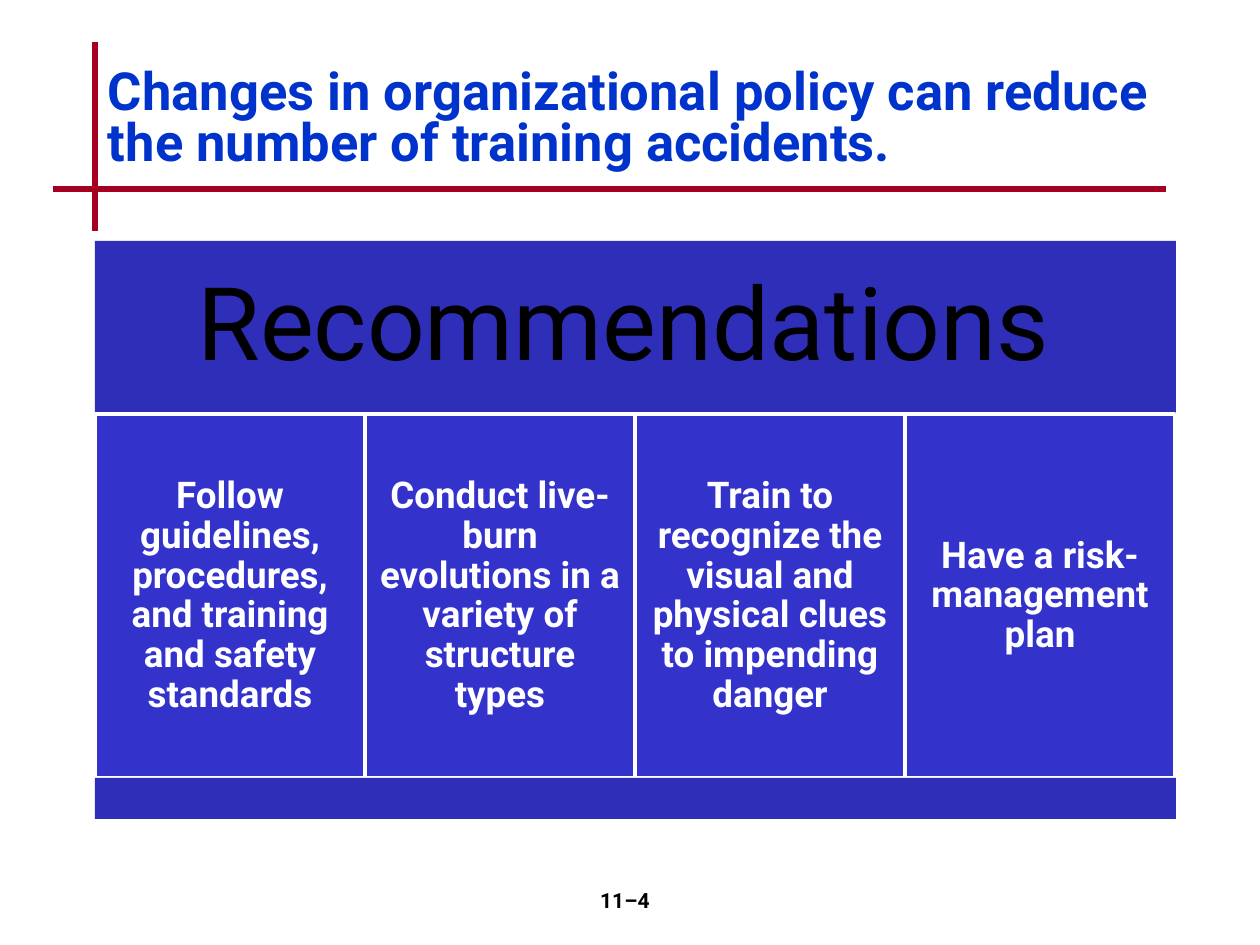
from lxml import etree
from pptx import Presentation
from pptx.dml.color import RGBColor
from pptx.enum.shapes import MSO_CONNECTOR as CONN, MSO_SHAPE as SHAPE
from pptx.enum.text import MSO_ANCHOR as ANCHOR, PP_ALIGN as ALIGN
from pptx.oxml.ns import qn
from pptx.util import Emu, Pt

PX = 914400 / 126
COLORS = {
    "rule": "A50021",
    "band": "2E2EB9",
    "card": "3333CC",
    "title": "0033CC",
    "white": "FFFFFF",
    "black": "000000",
}


def add_box(x, y, w, h, fill=None, line=None):
    s = slide.shapes.add_shape(SHAPE.RECTANGLE, *(Emu(round(v * PX)) for v in (x, y, w, h)))
    s.shadow.inherit = False
    s.fill.solid()
    s.fill.fore_color.rgb = RGBColor.from_string(COLORS[fill])
    if line:
        s.line.color.rgb = RGBColor.from_string(COLORS[line])
        s.line.width = Pt(2)
    else:
        s.line.fill.background()
    return s


def set_text(s, text, size, color, bold, align, spacing, anchor, inset_x, inset_y):
    tf = s.text_frame
    tf.text = text
    tf.word_wrap = True
    tf.vertical_anchor = anchor
    tf.margin_left = tf.margin_right = Emu(round(inset_x * PX))
    tf.margin_top = tf.margin_bottom = Emu(round(inset_y * PX))
    p = tf.paragraphs[0]
    p.alignment = align
    p.line_spacing = spacing
    font = p.runs[0].font
    font.name = "Roboto"
    font.size = Pt(size)
    font.bold = bold
    font.color.rgb = RGBColor.from_string(COLORS[color])


prs = Presentation()
prs.slide_width = Emu(round(1260 * PX))
prs.slide_height = Emu(round(945 * PX))
slide = prs.slides.add_slide(prs.slide_layouts[6])

for ends in [(95, 42, 95, 231), (53, 189, 1166, 189)]:
    c = slide.shapes.add_connector(CONN.STRAIGHT, *(Emu(round(v * PX)) for v in ends))
    c.line.color.rgb = RGBColor.from_string(COLORS["rule"])
    c.line.width = Pt(3)
    etree.SubElement(c._element.spPr, qn("a:effectLst"))

left, card_w = 95, 270
header = add_box(left, 241, 4 * card_w + 1, 173, "band")
set_text(header, "Recommendations", 58, "black", False, ALIGN.CENTER, 0.9, ANCHOR.MIDDLE, 30, 30)
header.text_frame.margin_right = Emu(round(54 * PX))

recommendations = [
    "Follow guidelines, procedures, and training and safety standards",
    "Conduct live-burn evolutions in a variety of structure types",
    "Train to recognize the visual and physical clues to impending danger",
    "Have a risk-management plan",
]
for i, text in enumerate(recommendations):
    card = add_box(left + i * card_w, 414, card_w, 364, "card", "white")
    set_text(card, text, 21, "white", True, ALIGN.CENTER, 0.9, ANCHOR.MIDDLE, 12, 12)

add_box(left, 778, 4 * card_w + 1, 41, "band")

title = slide.shapes.add_textbox(*(Emu(round(v * PX)) for v in (95, 42, 1071, 158)))
set_text(title, "Changes in organizational policy can reduce the number of training accidents.",
         30, "title", True, ALIGN.LEFT, 0.8, ANCHOR.MIDDLE, 13, 6)

number = slide.shapes.add_textbox(*(Emu(round(v * PX)) for v in (494, 882, 262, 63)))
set_text(number, "11–4", 12, "black", True, ALIGN.CENTER, 1.0, ANCHOR.TOP, 13, 6)

prs.save("out.pptx")
